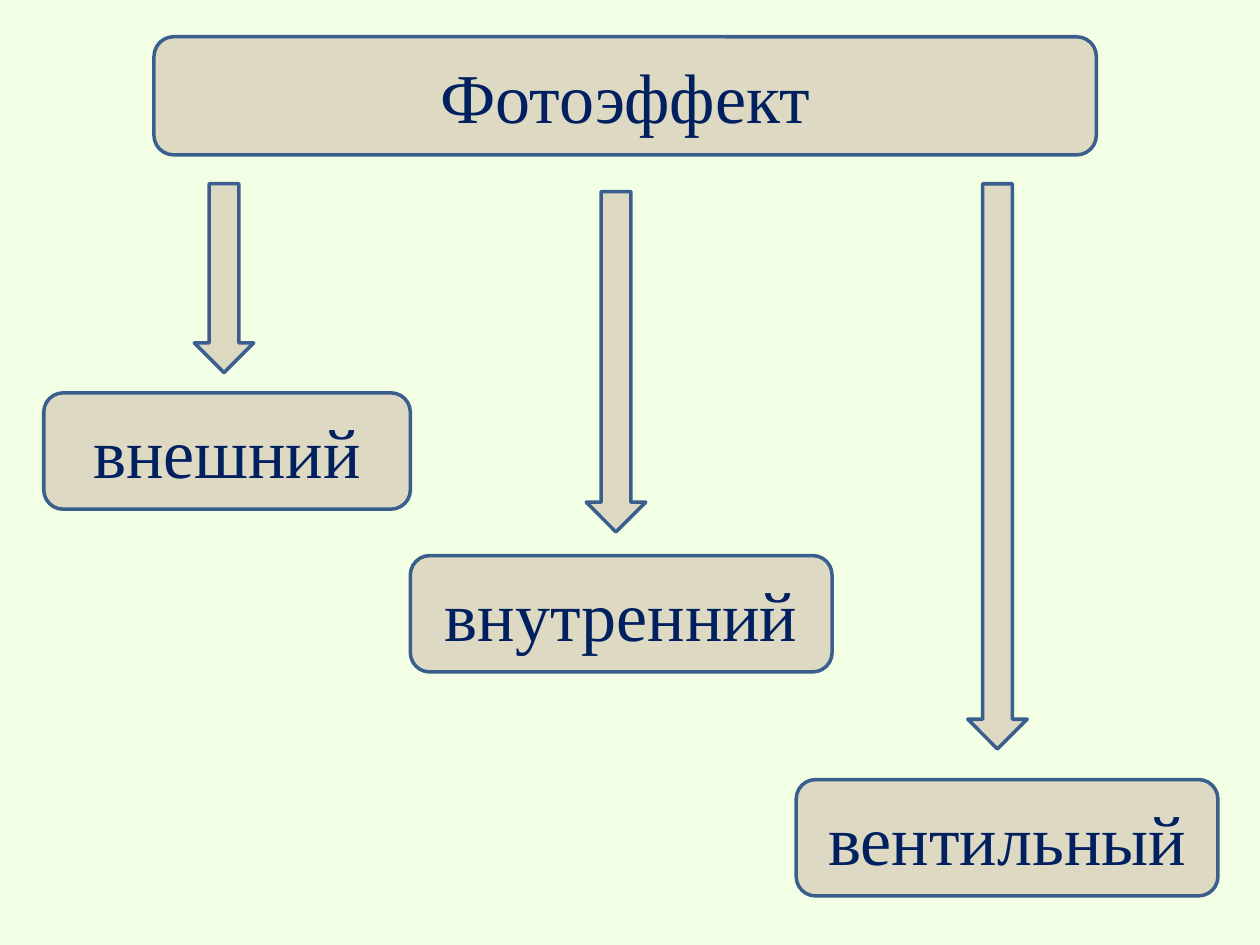
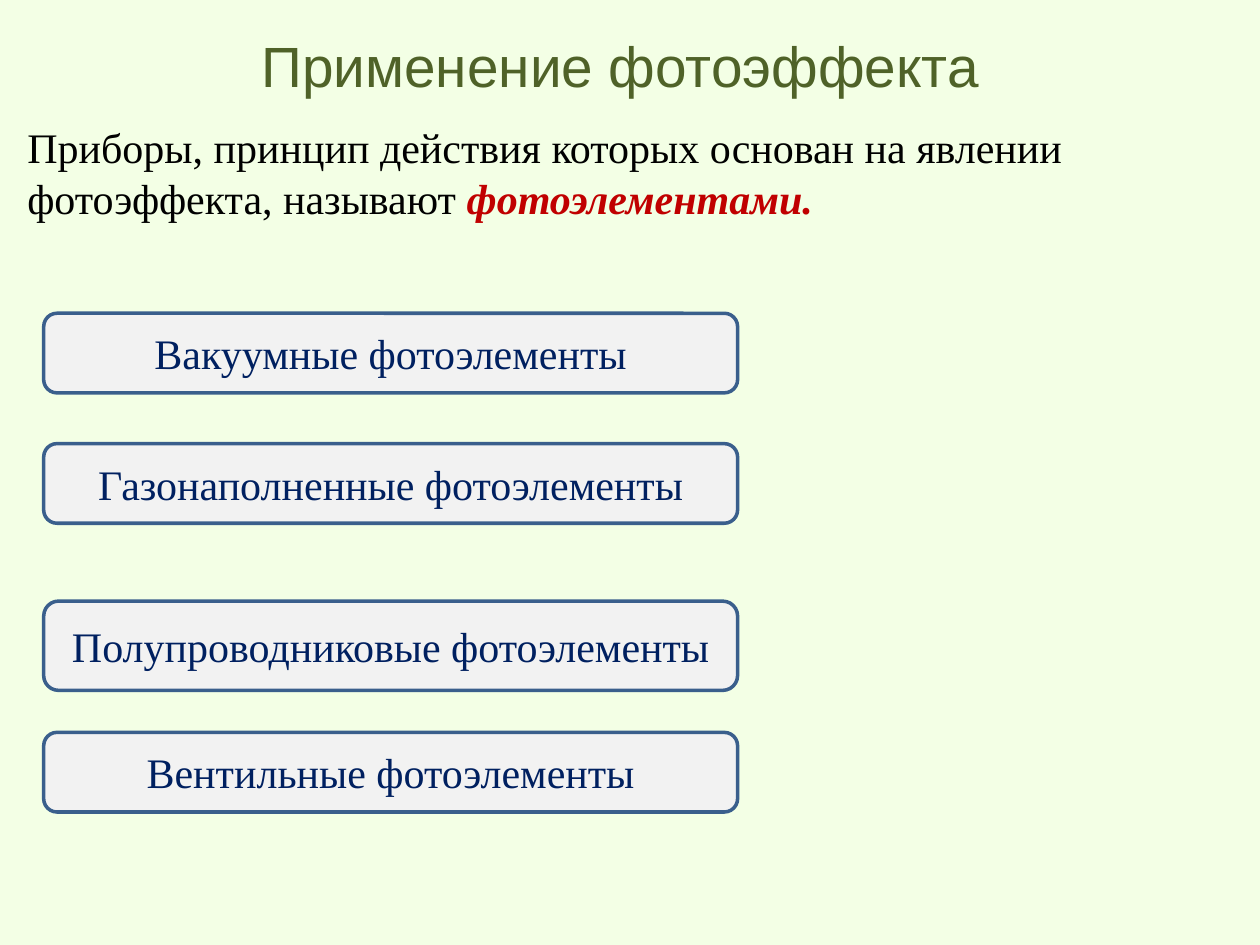
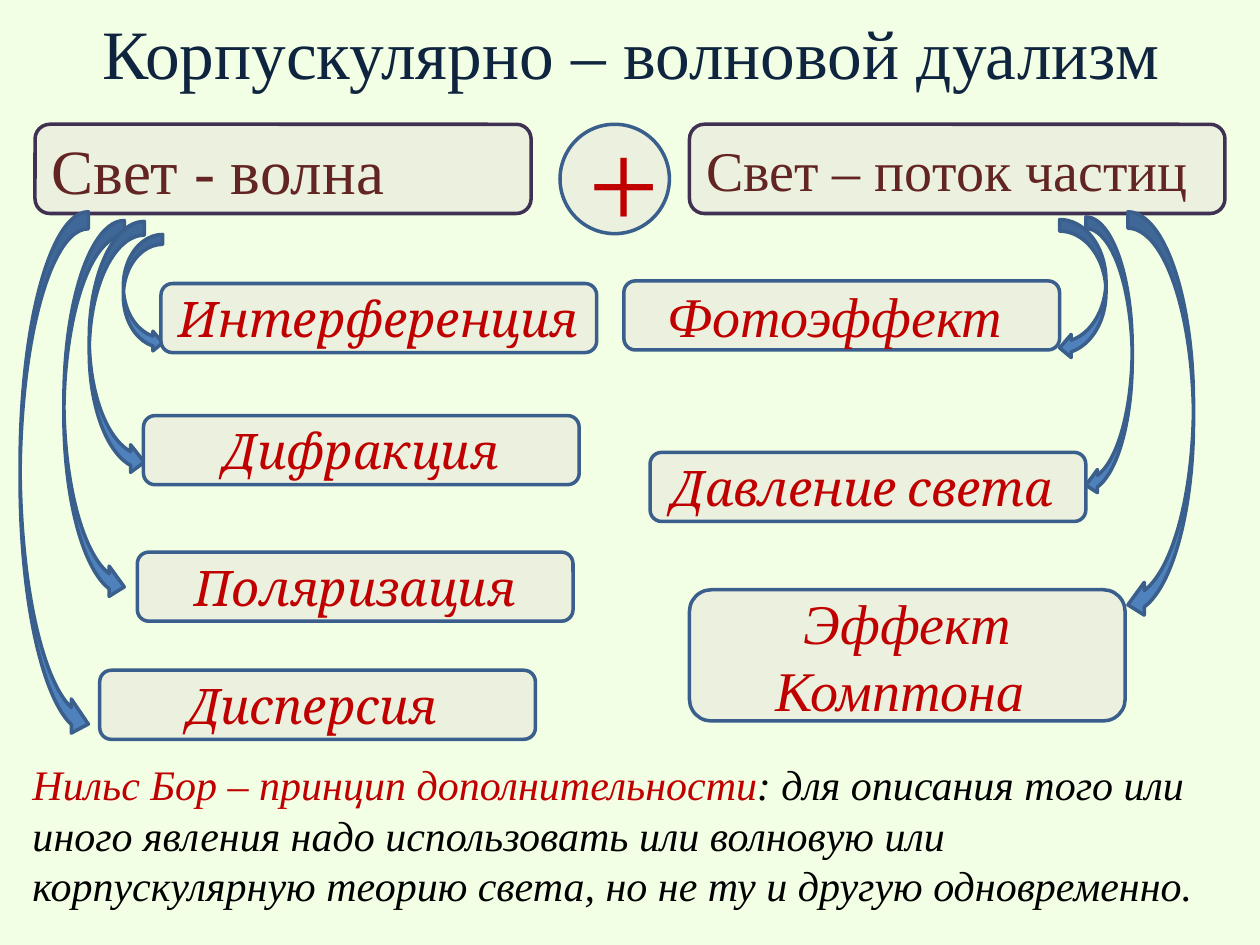
from collections import namedtuple

from pptx import Presentation
from pptx.dml.color import RGBColor as Rgb
from pptx.enum.shapes import MSO_SHAPE as Geo
from pptx.enum.text import MSO_ANCHOR as Anchor, PP_ALIGN as Align
from pptx.util import Pt

Box = namedtuple("Box", "left top width height")

COLORS = {
    "page": "F3FFE5", "sand": "DDD9C3", "mist": "F2F2F2", "leaf": "EBF1DE",
    "arrow": "4F81BD", "outline": "3A5F8C", "plum": "403152", "navy": "002060",
    "olive": "4F6228", "ink": "0F243E", "wine": "632523", "red": "C00000",
    "black": "000000",
}
TIMES = "Times New Roman"
KIND = {"name": TIMES, "size": Pt(40), "color": "navy"}
BODY = {"name": TIMES, "size": Pt(24), "color": "black"}
DEVICE = {**BODY, "color": "navy"}
EFFECT = {"name": "Cambria", "size": Pt(28), "color": "red", "italic": True}
LARGE_EFFECT = {**EFFECT, "name": TIMES, "size": Pt(32)}
NATURE = {"name": TIMES, "size": Pt(36), "color": "wine"}


def rgb(color):
    """Look up a named colour."""
    return Rgb.from_string(COLORS[color])


def within(region, left, top, width, height):
    """Turn offsets inside a region into a box on the slide."""
    return Box(region.left + left, region.top + top, width, height)


def write(frame, runs, align, anchor):
    """Fill a text frame with one paragraph of formatted runs."""
    frame.word_wrap = True
    frame.vertical_anchor = anchor
    paragraph = frame.paragraphs[0]
    paragraph.alignment = align
    for words, formats in runs:
        run = paragraph.add_run()
        run.text = words
        for key, value in formats.items():
            if key == "color":
                run.font.color.rgb = rgb(value)
            else:
                setattr(run.font, key, value)


def text_area(slide, box, runs, align=Align.LEFT, anchor=Anchor.TOP):
    """Place plain text in a box."""
    area = slide.shapes.add_textbox(*map(Pt, box))
    write(area.text_frame, runs, align, anchor)


def title(slide, box, words, formats):
    """Place a centred slide title."""
    text_area(slide, box, [(words, formats)], Align.CENTER, Anchor.MIDDLE)


def figure(slide, geometry, box, fill, outline="outline"):
    """Draw a flat outlined shape."""
    shape = slide.shapes.add_shape(geometry, *map(Pt, box))
    shape.shadow.inherit = False
    shape.fill.solid()
    shape.fill.fore_color.rgb = rgb(fill)
    shape.line.color.rgb = rgb(outline)
    shape.line.width = Pt(2)
    return shape


def card(slide, box, words, formats, fill, outline="outline",
         align=Align.CENTER, geometry=Geo.ROUNDED_RECTANGLE):
    """Draw a shape that holds a caption."""
    shape = figure(slide, geometry, box, fill, outline)
    write(shape.text_frame, [(words, formats)], align, Anchor.MIDDLE)


def arrows(slide, region, geometry, fill, places):
    """Draw a set of block arrows in a region."""
    for place in places:
        figure(slide, geometry, within(region, *place), fill)


def effects(slide, region, entries):
    """Draw the italic cards of one side of the duality."""
    for words, left, top, height, formats in entries:
        card(slide, within(region, left, top, 249, height), words, formats, "leaf")


def kinds_slide(slide, region):
    """Show the photoeffect and its three kinds."""
    card(slide, within(region, 63, 0, 538.5, 67.5), "Фотоэффект", KIND, "sand")
    arrows(slide, region, Geo.DOWN_ARROW, "sand", [
        (86, 84, 34, 108), (528, 84, 34, 323), (310, 88.5, 34, 194.5)])
    for words, left, top, width in [("внешний", 0, 203.5, 209.5),
                                    ("внутренний", 209.5, 296.5, 241),
                                    ("вентильный", 430, 424.5, 241)]:
        card(slide, within(region, left, top, width, 66.5), words, KIND, "sand")


def devices(slide, region):
    """List the types of photocells."""
    for words, top, height in [("Вакуумные фотоэлементы", 0, 45.5),
                               ("Газонаполненные фотоэлементы", 74.5, 45.5),
                               ("Полупроводниковые фотоэлементы", 164.5, 51),
                               ("Вентильные фотоэлементы", 239.5, 45.5)]:
        card(slide, within(region, 0, top, region.width, height),
             words, DEVICE, "mist")


def uses_slide(slide, region):
    """Explain where the photoeffect is used."""
    title(slide, within(region, 22, 0, 648, 44), "Применение фотоэффекта",
          {"name": "Arial", "size": Pt(32.4), "color": "olive"})
    text_area(slide, within(region, 0, 51, 686, 65.5), [
        ("Приборы, принцип действия которых основан на явлении "
         "фотоэффекта, называют ", BODY),
        ("фотоэлементами.", {**BODY, "color": "red", "bold": True, "italic": True}),
    ])
    devices(slide, within(region, 16.5, 164, 396.5, 285))


def natures(slide, region):
    """Join the two natures of light with a plus sign."""
    for words, left, width, size in [("Свет - волна", 0, 283.5, 36),
                                     ("Свет – поток частиц", 374, 306, 32)]:
        card(slide, within(region, left, 0, width, 51), words,
             {**NATURE, "size": Pt(size)}, "leaf", "plum", Align.LEFT)
    card(slide, within(region, 300, 0, 62.5, 62.5), "+",
         {**NATURE, "size": Pt(72), "color": "red"}, "leaf", geometry=Geo.OVAL)


def wave_side(slide, region):
    """Show the effects that reveal waves."""
    arrows(slide, region, Geo.CURVED_RIGHT_ARROW, "arrow", [
        (59, 13, 22.5, 67.5), (25, 5, 34.5, 218),
        (39.5, 5.5, 31.5, 145.5), (0, 0, 39, 302.5)])
    effects(slide, region, [
        ("Интерференция ", 80.5, 41, 39.5, EFFECT),
        ("Дифракция", 70.5, 116.5, 39.5, EFFECT),
        ("Поляризация", 67, 194.5, 39.5, EFFECT),
        ("Дисперсия ", 45.5, 262, 39.5, EFFECT)])


def particle_side(slide, region):
    """Show the effects that reveal particles."""
    effects(slide, region, [
        ("Фотоэффект ", 0, 39.5, 39.5, LARGE_EFFECT),
        ("Давление света ", 15, 137.5, 39.5, EFFECT),
        ("Эффект Комптона ", 37.5, 216, 75, LARGE_EFFECT)])
    arrows(slide, region, Geo.CURVED_LEFT_ARROW, "arrow", [
        (249, 4.5, 26.5, 80), (264, 3, 26.5, 160), (288, 0, 37.5, 234)])


def duality_slide(slide, region):
    """Set the wave and particle views of light side by side."""
    title(slide, within(region, 25, 0, 648, 55.5),
          "Корпускулярно – волновой дуализм",
          {"name": TIMES, "size": Pt(39.6), "color": "ink"})
    natures(slide, within(region, 8.5, 69, 680, 62.5))
    wave_side(slide, within(region, 0, 119, 330, 302.5))
    particle_side(slide, within(region, 345, 119, 325.5, 291))
    quote = {**BODY, "italic": True}
    text_area(slide, within(region, 0, 428, 700, 116.5), [
        ("Нильс Бор – принцип дополнительности", {**quote, "color": "red"}),
        (": для описания того или иного явления надо использовать или волновую "
         "или корпускулярную теорию света, но не ту и другую одновременно.", quote),
    ])


def main():
    """Build the presentation."""
    deck = Presentation()
    deck.slide_width, deck.slide_height = Pt(720), Pt(540)
    page = deck.slide_master.background.fill
    page.solid()
    page.fore_color.rgb = rgb("page")
    blank = deck.slide_layouts[6]
    for build, region in [(kinds_slide, Box(25, 21, 671, 491)),
                          (uses_slide, Box(8.5, 15, 686, 450)),
                          (duality_slide, Box(11.5, 2, 700, 544.5))]:
        build(deck.slides.add_slide(blank), region)
    deck.save("out.pptx")


if __name__ == "__main__":
    main()
